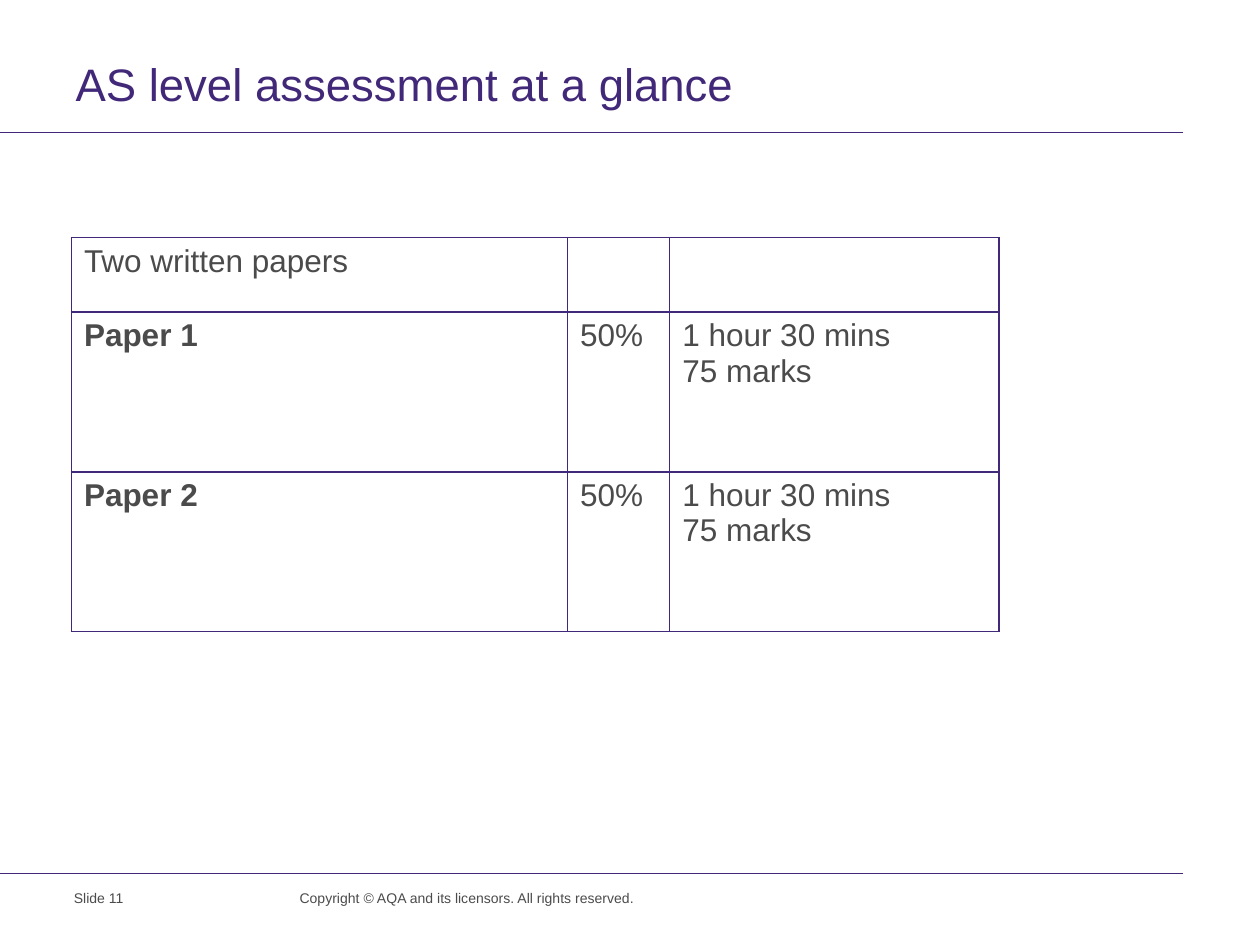
from dataclasses import dataclass

from lxml import etree
from pptx import Presentation
from pptx.dml.color import RGBColor
from pptx.enum.shapes import MSO_CONNECTOR
from pptx.enum.text import MSO_ANCHOR, PP_ALIGN
from pptx.oxml.ns import qn
from pptx.util import Cm, Pt

STRAIGHT = MSO_CONNECTOR.STRAIGHT
TOP = MSO_ANCHOR.TOP
LEFT = PP_ALIGN.LEFT
TITLE_ONLY = 5


@dataclass(frozen=True)
class Theme:
    font: str = "Arial"
    purple: str = "412878"
    grey: str = "4B4B4B"
    title_size: float = 26
    table_size: float = 18
    footer_size: float = 8
    rule_width: float = 0.6
    border_width: float = 1


@dataclass(frozen=True)
class FooterItem:
    text: str
    left: float
    width: float


@dataclass(frozen=True)
class Paper:
    name: str
    weight: str = ""
    details: tuple[str, ...] = ()
    bold: bool = True


THEME = Theme()
RULE_TOPS = (2.67, 17.6)
RULE_RIGHT = 23.85
FOOTER_TOP = 17.81
FOOTER = (
    FooterItem("Slide 11", 1.24, 3.96),
    FooterItem("Copyright © AQA and its licensors. All rights reserved.", 5.79, 7.44),
)
COLUMNS = (10, 2.06, 6.64)
ROWS = (1.5, 3.22, 3.22)
EXAM = ("1 hour 30 mins", "75 marks")
PAPERS = (
    Paper("Two written papers", bold=False),
    Paper("Paper 1", "50%", EXAM),
    Paper("Paper 2", "50%", EXAM),
)


def set_text(tf, *lines: str, size: float, color: str = THEME.grey,
             bold: bool = False, line_spacing: float | None = None) -> None:
    """Write each line as a paragraph, all in the same format."""
    for i, line in enumerate(lines):
        p = tf.add_paragraph() if i else tf.paragraphs[0]
        p.alignment = LEFT
        if line_spacing:
            p.line_spacing = Pt(line_spacing)
        r = p.add_run()
        r.text = line
        r.font.name = THEME.font
        r.font.size = Pt(size)
        r.font.bold = bold
        r.font.color.rgb = RGBColor.from_string(color)


def add_title(s, text: str) -> None:
    sp = s.shapes.title
    sp.left, sp.top, sp.width, sp.height = Cm(1.27), Cm(1.12), Cm(24.13), Cm(1.22)
    sp.text_frame.vertical_anchor = TOP
    set_text(sp.text_frame, text, size=THEME.title_size, color=THEME.purple,
             line_spacing=28)


def add_rule(s, top: float) -> None:
    rule = s.shapes.add_connector(STRAIGHT, 0, Cm(top), Cm(RULE_RIGHT), Cm(top))
    rule.line.color.rgb = RGBColor.from_string(THEME.purple)
    rule.line.width = Pt(THEME.rule_width)
    etree.SubElement(rule._element.spPr, qn("a:effectLst"))


def add_footer_item(s, item: FooterItem) -> None:
    sp = s.shapes.add_textbox(Cm(item.left), Cm(FOOTER_TOP), Cm(item.width), Cm(0.66))
    sp.text_frame.word_wrap = True
    set_text(sp.text_frame, item.text, size=THEME.footer_size)


def set_borders(cell) -> None:
    tc_pr = cell._tc.get_or_add_tcPr()
    for side in ("lnL", "lnR", "lnT", "lnB"):
        ln = etree.SubElement(tc_pr, qn(f"a:{side}"), w=str(Pt(THEME.border_width)))
        fill = etree.SubElement(ln, qn("a:solidFill"))
        etree.SubElement(fill, qn("a:srgbClr"), val=THEME.purple)


def add_papers_table(s, papers: tuple[Paper, ...]) -> None:
    frame = s.shapes.add_table(len(ROWS), len(COLUMNS), Cm(1.44), Cm(4.79),
                               Cm(sum(COLUMNS)), Cm(sum(ROWS)))
    table = frame.table
    table.first_row = table.horz_banding = False
    for column, width in zip(table.columns, COLUMNS):
        column.width = Cm(width)
    for row, height, paper in zip(table.rows, ROWS, papers):
        row.height = Cm(height)
        contents = ((paper.name,), (paper.weight,), paper.details)
        for i, (cell, lines) in enumerate(zip(row.cells, contents)):
            set_borders(cell)
            cell.fill.background()
            cell.vertical_anchor = TOP
            if any(lines):
                set_text(cell.text_frame, *lines, size=THEME.table_size,
                         bold=paper.bold and i == 0)


def main() -> None:
    prs = Presentation()
    prs.slide_width, prs.slide_height = Cm(25.4), Cm(19.05)
    s = prs.slides.add_slide(prs.slide_layouts[TITLE_ONLY])
    for top in RULE_TOPS:
        add_rule(s, top)
    add_title(s, "AS level assessment at a glance")
    for item in FOOTER:
        add_footer_item(s, item)
    add_papers_table(s, PAPERS)
    prs.save("out.pptx")


if __name__ == "__main__":
    main()
